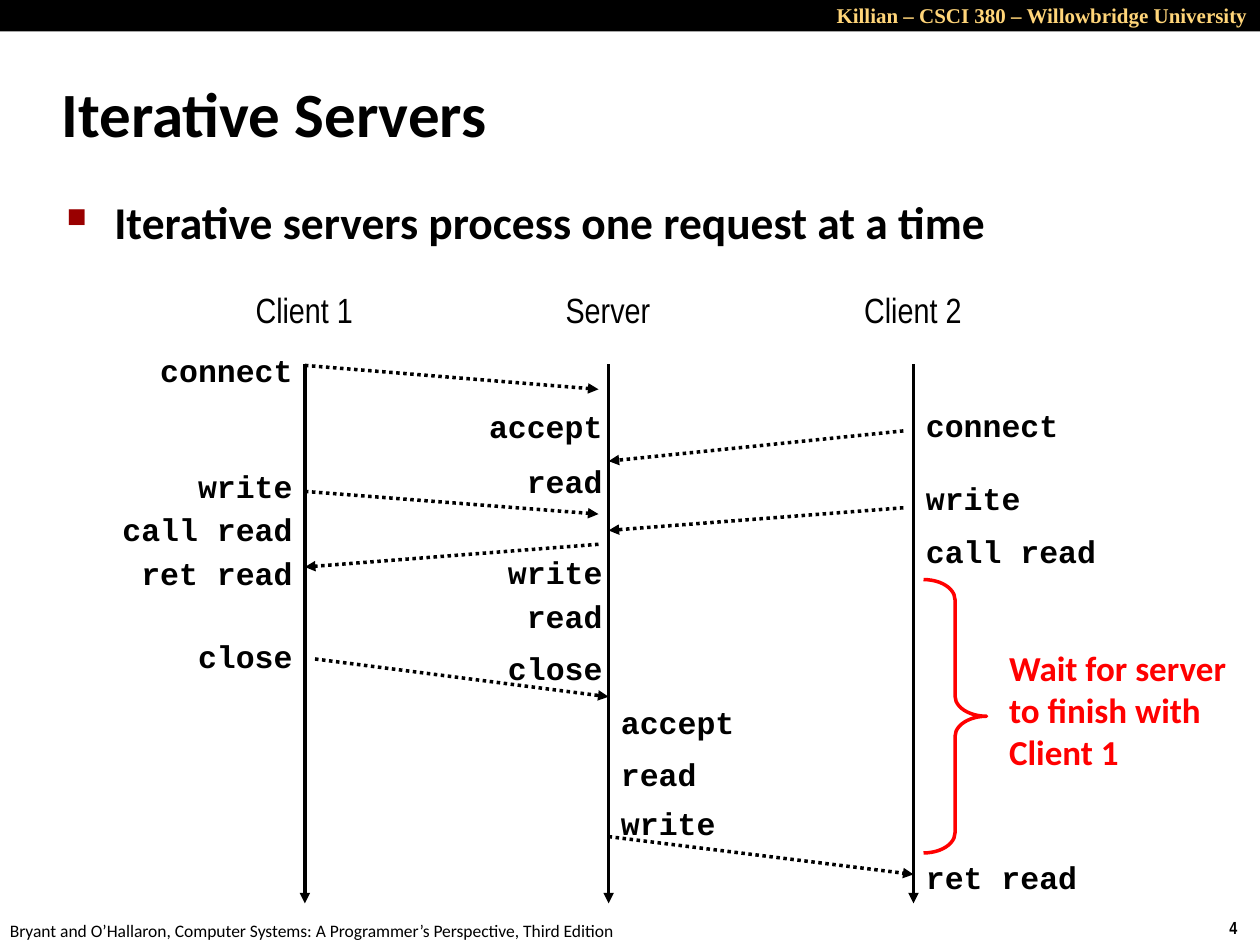
from dataclasses import dataclass

from lxml.etree import SubElement
from pptx import Presentation
from pptx.dml.color import RGBColor
from pptx.enum.dml import MSO_LINE
from pptx.enum.shapes import MSO_CONNECTOR, MSO_SHAPE
from pptx.enum.text import MSO_ANCHOR, PP_ALIGN
from pptx.oxml.ns import qn
from pptx.util import Inches, Pt


@dataclass(frozen=True)
class Theme:
    ink: str = "000000"
    paper: str = "FFFFFF"
    gold: str = "FFD579"
    alert: str = "FF0000"
    bullet: str = "990000"
    sans: str = "Calibri"
    narrow: str = "Arial Narrow"
    mono: str = "Courier New"
    serif: str = "Times New Roman"
    title: int = 36
    body: int = 26
    head: int = 20
    code: int = 18
    band: int = 12
    foot: int = 10
    line: int = 2


class Page:
    def __init__(self, slide, theme):
        self.slide = slide
        self.theme = theme
        fill = slide.background.fill
        fill.solid()
        fill.fore_color.rgb = RGBColor.from_string(theme.paper)

    def text(self, words, box, size, font, color=None, bold=True,
             align=PP_ALIGN.LEFT, wrap=False, anchor=MSO_ANCHOR.TOP):
        shape = self.slide.shapes.add_textbox(*map(Inches, box))
        frame = shape.text_frame
        frame.word_wrap = wrap
        frame.vertical_anchor = anchor
        para = frame.paragraphs[0]
        para.alignment = align
        run = para.add_run()
        run.text = words
        run.font.size = Pt(size)
        run.font.name = font
        run.font.bold = bold
        run.font.color.rgb = RGBColor.from_string(color or self.theme.ink)
        return para

    def indent(self, para, left):
        """Hang the first line back by the left margin."""
        props = para._p.get_or_add_pPr()
        props.set("marL", str(Inches(left)))
        props.set("indent", str(-Inches(left)))
        return props

    def bullet(self, words, box):
        para = self.text(words, box, self.theme.body, self.theme.sans, wrap=True)
        props = self.indent(para, 0.38)
        color = SubElement(props, qn("a:buClr"))
        SubElement(color, qn("a:srgbClr"), val=self.theme.bullet)
        SubElement(props, qn("a:buSzPct"), val="60000")
        SubElement(props, qn("a:buChar"), char="■")

    def call(self, words, edge, top, right=False):
        """Place a code label with its left or right side on the edge."""
        width = 0.2 + 0.15 * len(words)
        left = edge - width if right else edge
        align = PP_ALIGN.RIGHT if right else PP_ALIGN.LEFT
        self.text(words, (left, top, width, 0.4), self.theme.code,
                  self.theme.mono, align=align)

    def arrow(self, start, end, dotted=True):
        line = self.slide.shapes.add_connector(
            MSO_CONNECTOR.STRAIGHT, *map(Inches, (*start, *end)))
        line.line.width = Pt(self.theme.line)
        line.line.color.rgb = RGBColor.from_string(self.theme.ink)
        if dotted:
            line.line.dash_style = MSO_LINE.ROUND_DOT
        SubElement(line.line._get_or_add_ln(), qn("a:tailEnd"), type="triangle")
        SubElement(line._element.spPr, qn("a:effectLst"))

    def band(self, box):
        shape = self.slide.shapes.add_shape(MSO_SHAPE.RECTANGLE, *map(Inches, box))
        shape.shadow.inherit = False
        shape.fill.solid()
        shape.fill.fore_color.rgb = RGBColor.from_string(self.theme.ink)
        shape.line.fill.background()

    def brace(self, box):
        shape = self.slide.shapes.add_shape(MSO_SHAPE.RIGHT_BRACE, *map(Inches, box))
        shape.shadow.inherit = False
        shape.adjustments[0] = 0.32
        shape.adjustments[1] = 0.5
        shape.fill.background()
        shape.line.width = Pt(self.theme.line)
        shape.line.color.rgb = RGBColor.from_string(self.theme.alert)


ONE, HOST, TWO = 2.42, 4.83, 7.25

# Label edge, whether the edge is the right side, then words and tops
CALLS = [
    (ONE, True, [("connect", 2.74), ("write", 3.66), ("call read", 4),
                 ("ret read", 4.35), ("close", 5.01)]),
    (HOST + 0.05, True, [("accept", 3.18), ("read", 3.62), ("write", 4.34),
                         ("read", 4.69), ("close", 5.1)]),
    (HOST, False, [("accept", 5.53), ("read", 5.94), ("write", 6.33)]),
    (TWO, False, [("connect", 3.17), ("write", 3.75), ("call read", 4.17),
                  ("ret read", 6.76)]),
]

SENDS = [
    ((ONE, 2.9), (4.75, 3.09)),
    ((7.17, 3.42), (HOST, 3.66)),
    ((ONE, 3.9), (4.75, 4.08)),
    ((7.17, 4.03), (HOST, 4.21)),
    ((4.75, 4.32), (ONE, 4.5)),
    ((2.5, 5.23), (HOST, 5.53)),
    ((HOST, 6.64), (TWO, 6.94)),
]


def main():
    deck = Presentation()
    deck.slide_width, deck.slide_height = Inches(10), Inches(7.5)
    theme = Theme()
    page = Page(deck.slides.add_slide(deck.slide_layouts[6]), theme)

    page.text("4", (9.66, 7.23, 0.34, 0.27), theme.foot, theme.narrow)
    page.text("Bryant and O’Hallaron, Computer Systems: "
              "A Programmer’s Perspective, Third Edition",
              (-0.02, 7.25, 5.08, 0.27), theme.foot, theme.sans, bold=False)
    page.band((0, 0, 10, 0.25))
    page.text("Killian – CSCI 380 – Willowbridge University",
              (4.5, -0.03, 5.5, 0.3), theme.band, theme.serif, theme.gold,
              align=PP_ALIGN.RIGHT, wrap=True)

    title = page.text("Iterative Servers", (0.39, 0.48, 8.3, 0.83), theme.title,
                      theme.sans, wrap=True, anchor=MSO_ANCHOR.MIDDLE)
    page.indent(title, 0.13)
    page.bullet("Iterative servers process one request at a time",
                (0.43, 1.49, 8.64, 5.44))

    for name, x, width in (("Client 1", ONE, 0.98), ("Server", HOST, 0.88),
                           ("Client 2", TWO, 0.98)):
        page.text(name, (x - width / 2, 2.24, width, 0.44), theme.head,
                  theme.narrow, bold=False)
        page.arrow((x, 2.89), (x, 7.17), dotted=False)

    for start, end in SENDS:
        page.arrow(start, end)
    for edge, right, items in CALLS:
        for words, top in items:
            page.call(words, edge, top, right)

    page.brace((7.33, 4.6, 0.5, 2.17))
    page.text("Wait for server to finish with Client 1", (7.91, 5.08, 2.09, 1.11),
              theme.head, theme.sans, theme.alert, wrap=True)
    deck.save("out.pptx")


if __name__ == "__main__":
    main()
